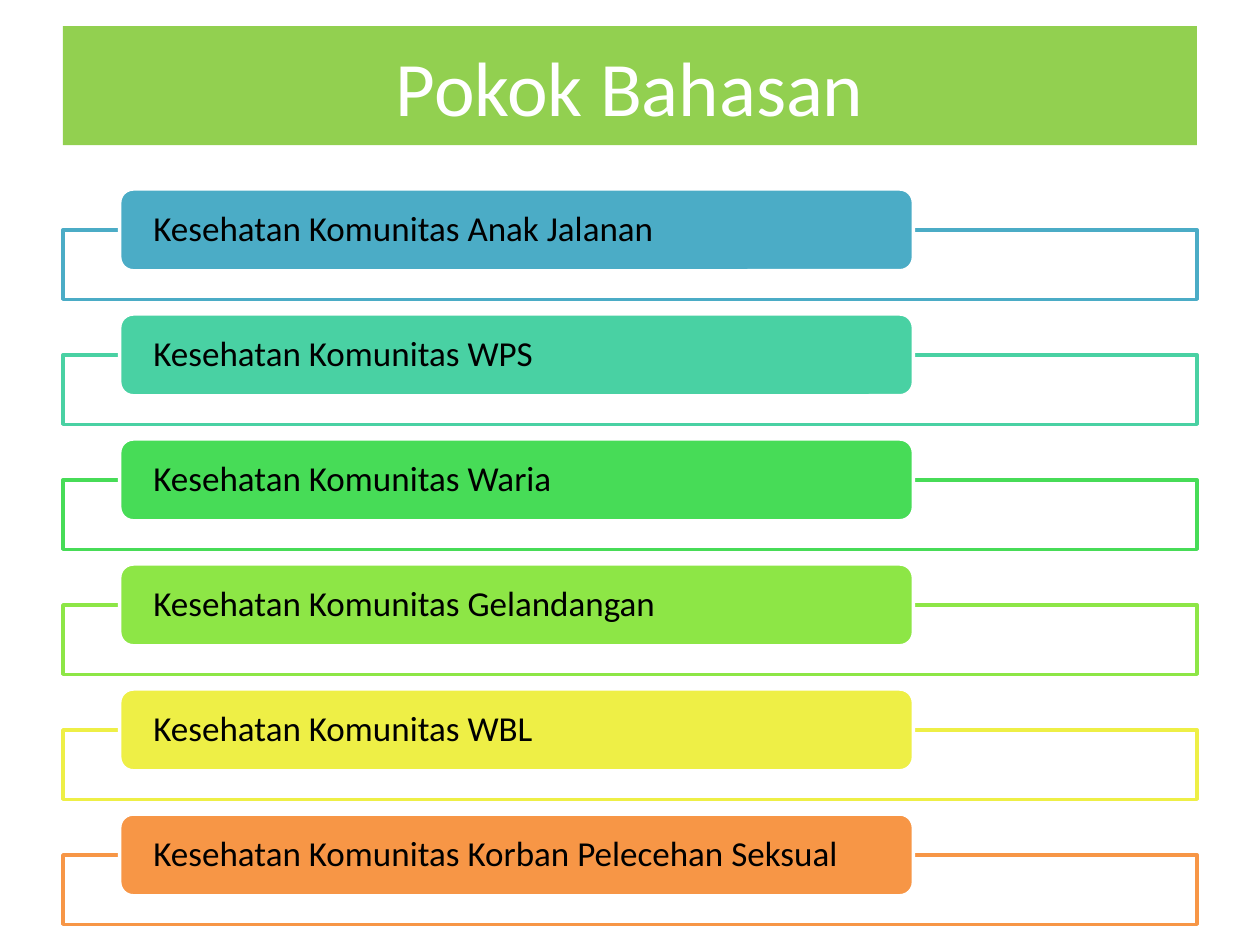
from pptx import Presentation
from pptx import util as u
from pptx.dml.color import RGBColor
from pptx.enum import shapes, text

FONT = "Calibri"
WHITE = "FFFFFF"
TOPICS = [
    ("Kesehatan Komunitas Anak Jalanan", "4BACC6"),
    ("Kesehatan Komunitas WPS", "49D1A3"),
    ("Kesehatan Komunitas Waria", "47DC57"),
    ("Kesehatan Komunitas Gelandangan", "8DE646"),
    ("Kesehatan Komunitas WBL", "EEEF46"),
    ("Kesehatan Komunitas Korban Pelecehan Seksual", "F79646"),
]


def colour(hex_code):
    return RGBColor.from_string(hex_code)


def add_box(page, kind, left, top, width, height, fill, line=None):
    """Add a flat shape, measured in centimetres, with an optional 2 pt outline."""
    box = page.shapes.add_shape(
        kind, u.Cm(left), u.Cm(top), u.Cm(width), u.Cm(height))
    box.shadow.inherit = False
    box.fill.solid()
    box.fill.fore_color.rgb = colour(fill)
    if line:
        box.line.color.rgb = colour(line)
        box.line.width = u.Pt(2)
    else:
        box.line.fill.background()
    return box


def write(box, words, size, ink, align):
    frame = box.text_frame
    frame.word_wrap = True
    frame.vertical_anchor = text.MSO_ANCHOR.MIDDLE
    para = frame.paragraphs[0]
    para.text = words
    para.alignment = align
    para.font.name = FONT
    para.font.size = u.Pt(size)
    para.font.color.rgb = colour(ink)
    return frame


def add_title(page, left, top, width, height):
    banner = add_box(page, shapes.MSO_SHAPE.RECTANGLE,
                     left, top, width, height, "92D050")
    write(banner, "Pokok Bahasan", 44, WHITE, text.PP_ALIGN.CENTER)


def add_topic(page, left, top, width, words, accent):
    """Add an outlined panel with a coloured label over its upper edge."""
    label_height = 1.65
    add_box(page, shapes.MSO_SHAPE.RECTANGLE,
            left, top + label_height / 2, width, 1.4, WHITE, accent)
    label = add_box(page, shapes.MSO_SHAPE.ROUNDED_RECTANGLE,
                    left + width * 0.05, top, width * 0.7, label_height,
                    accent, WHITE)
    frame = write(label, words, 20, "000000", text.PP_ALIGN.LEFT)
    frame.margin_left = frame.margin_right = u.Cm(0.6)
    frame.margin_top = frame.margin_bottom = 0
    frame.paragraphs[0].line_spacing = 0.9


def add_topic_list(page, left, top, width, pitch):
    for row, (words, accent) in enumerate(TOPICS):
        add_topic(page, left, top + row * pitch, width, words, accent)


def main():
    deck = Presentation()
    deck.slide_width, deck.slide_height = u.Cm(25.4), u.Cm(19.05)
    page = deck.slides.add_slide(deck.slide_layouts[6])
    add_title(page, 1.27, 0.53, 22.86, 2.4)
    add_topic_list(page, 1.27, 3.81, 22.86, 2.52)
    deck.save("out.pptx")


if __name__ == "__main__":
    main()
